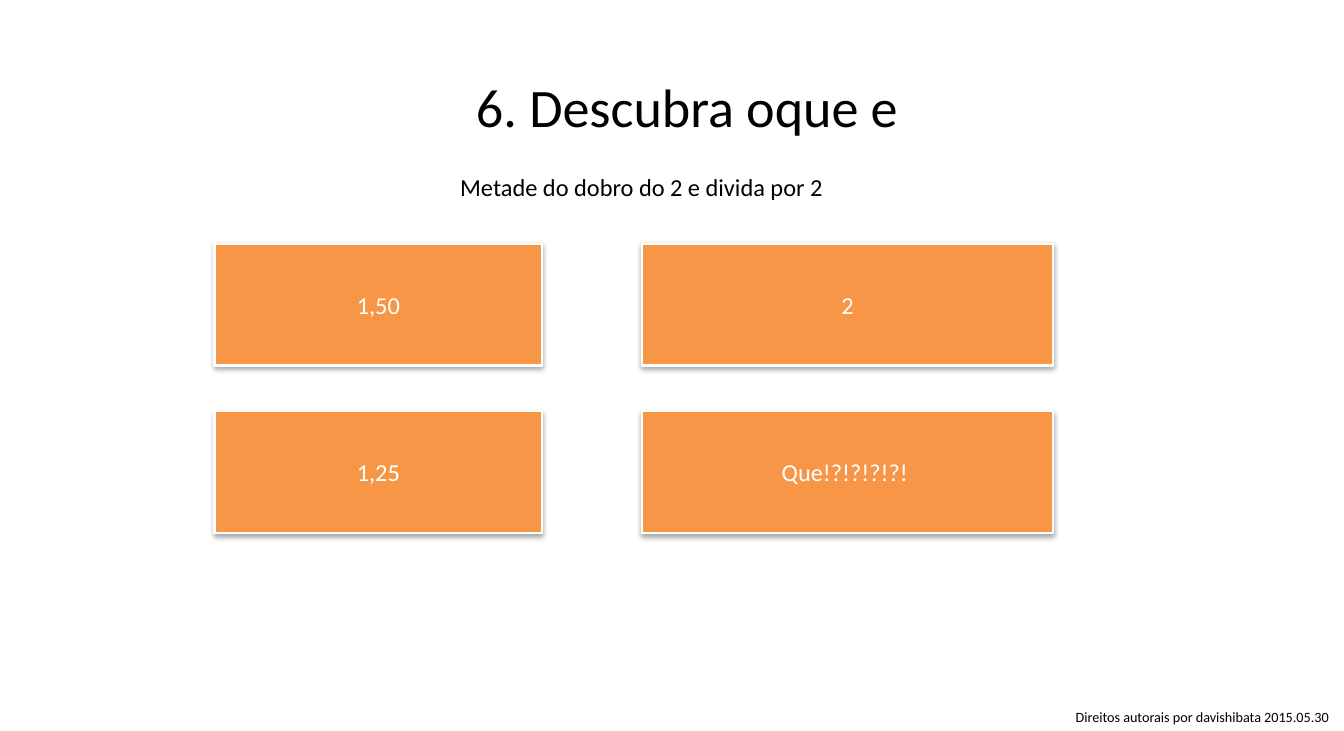
from lxml import etree
from pptx import Presentation
from pptx.dml.color import RGBColor
from pptx.enum import shapes, text
from pptx.oxml.ns import qn
from pptx.util import Inches, Pt

COLORS = {"answer": "F79646", "light": "FFFFFF", "dark": "000000"}


def write(box, wording, size, color, align, frame_format):
    frame = box.text_frame
    for name, value in frame_format.items():
        setattr(frame, name, value)
    para = frame.paragraphs[0]
    para.alignment = align
    span = para.add_run()
    span.text = wording
    for name, value in {"name": "Calibri", "size": Pt(size)}.items():
        setattr(span.font, name, value)
    span.font.color.rgb = RGBColor.from_string(COLORS[color])


def add_soft_shadow(box):
    """Cast a faint black shadow straight down."""
    box.shadow.inherit = False
    effects = box._element.spPr.find(qn("a:effectLst"))
    shadow = etree.SubElement(effects, qn("a:outerShdw"), blurRad=str(Pt(4)),
                              dist=str(Pt(2)), dir="5400000", rotWithShape="0")
    tint = etree.SubElement(shadow, qn("a:srgbClr"), val=COLORS["dark"])
    etree.SubElement(tint, qn("a:alpha"), val="35000")


deck = Presentation()
deck.slide_width, deck.slide_height = Inches(13.78), Inches(7.5)
page = deck.slides.add_slide(deck.slide_layouts[5])

# Title, question and credit
label_format = {"word_wrap": False, "vertical_anchor": text.MSO_ANCHOR.TOP,
                "auto_size": text.MSO_AUTO_SIZE.SHAPE_TO_FIT_TEXT}
title = page.shapes.title
question = page.shapes.add_textbox(0, 0, 0, 0)
credit = page.shapes.add_textbox(0, 0, 0, 0)
labels = [
    (title, "6. Descubra oque e", 40, (4.78, 0.7, 4.57, 0.77)),
    (question, "Metade do dobro do 2 e divida por 2", 18, (4.62, 1.72, 3.97, 0.4)),
    (credit, "Direitos autorais por davishibata 2015.05.30", 10.5,
     (10.93, 7.22, 2.85, 0.28)),
]
for box, wording, size, place in labels:
    for side, length in zip(("left", "top", "width", "height"), place):
        setattr(box, side, Inches(length))
    write(box, wording, size, "dark", text.PP_ALIGN.LEFT, label_format)

# Answers in two rows and two columns
answer_format = {"word_wrap": True, "vertical_anchor": text.MSO_ANCHOR.MIDDLE}
columns = [(2.2, 3.36), (6.58, 4.22)]
answers = [("1,50", "2"), ("1,25", "Que!?!?!?!?! ")]
for row, wordings in enumerate(answers):
    for (left, width), wording in zip(columns, wordings):
        answer = page.shapes.add_shape(
            shapes.MSO_SHAPE.RECTANGLE, Inches(left), Inches(2.5 + 1.72 * row),
            Inches(width), Inches(1.25))
        answer.fill.solid()
        answer.fill.fore_color.rgb = RGBColor.from_string(COLORS["answer"])
        answer.line.color.rgb = RGBColor.from_string(COLORS["light"])
        answer.line.width = Pt(1.57)
        add_soft_shadow(answer)
        write(answer, wording, 18, "light", text.PP_ALIGN.CENTER, answer_format)

deck.save("out.pptx")
